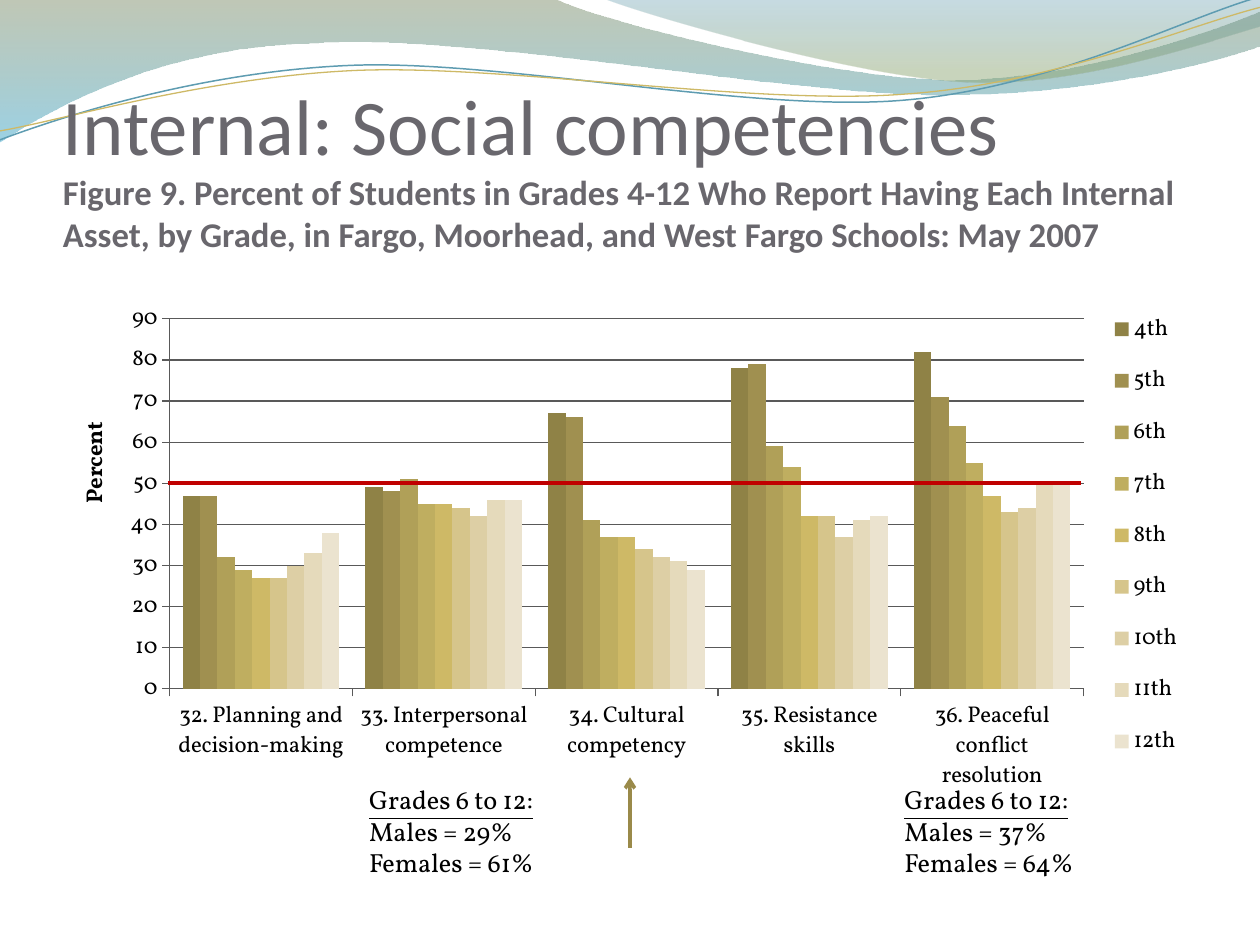
from dataclasses import dataclass

import lxml.etree
import pptx
import pptx.chart.data
import pptx.dml.color
import pptx.enum.chart
import pptx.enum.text
import pptx.oxml.ns
import pptx.util
from pptx.util import Cm, Pt

qn = pptx.oxml.ns.qn


@dataclass(frozen=True)
class Theme:
    heading_font: str = "Calibri"
    body_font: str = "Vollkorn"
    heading: str = "69676D"
    body: str = "000000"
    grid: str = "595959"
    threshold: str = "C00000"
    arrow: str = "9A8A4A"
    grades: tuple = ("8F8246", "A09050", "B0A058", "BFAE60", "CEB966",
                     "D6C58B", "DDCFA5", "E5DABB", "EBE3CF")
    title_size: float = 45
    subtitle_size: float = 19.8
    note_size: float = 15
    chart_size: float = 13


@dataclass(frozen=True)
class Stop:
    position: float
    color: str
    alpha: int


@dataclass(frozen=True)
class Wave:
    """Centimetre outline: a pair is a straight step, six numbers a Bezier curve."""
    start: tuple
    steps: tuple
    stops: tuple = ()
    line: str = ""
    width: float = 0


@dataclass(frozen=True)
class GenderNote:
    left: float
    males: int
    females: int


THEME = Theme()
WAVES = (
    Wave((0, 0), ((11.18, -0.03), (12.09, 0.43, 16.87, 1.6, 19.25, 1.6),
                  (21.67, 1.6, 24.33, 0.66, 25.4, 0.23), (25.43, 0.91),
                  (24.97, 1.12, 22.1, 1.93, 18.95, 1.91),
                  (15.8, 1.91, 9.7, 0.71, 6.53, 0.86),
                  (3.28, 0.91, 1.17, 2.11, -0.03, 2.87)),
         stops=(Stop(0, "74855E", 45), Stop(1, "4AACCE", 55))),
    Wave((12.17, -0.03), ((12.93, 0.28, 17.32, 1.57, 19.53, 1.65),
                          (21.74, 1.75, 24.41, 0.81, 25.4, 0.53), (25.4, 0)),
         stops=(Stop(0, "45889F", 30), Stop(0.8, "8AA36D", 45))),
    Wave((0, 2.82), ((1.22, 2.36, 4.01, 1.45, 7.04, 1.32),
                     (10.03, 1.19, 15.06, 2.26, 18.11, 2.03),
                     (21.16, 1.8, 23.83, 0.38, 25.35, -0.05)),
         line="5E9CB1", width=0.85),
    Wave((0, 2.64), ((1.19, 2.44, 4.17, 1.55, 7.19, 1.42),
                     (10.24, 1.3, 15.16, 2.13, 18.21, 1.9),
                     (21.23, 1.7, 23.9, 0.53, 25.4, 0.15)),
         line="CEB966", width=0.75),
)
ASSETS = ("32.\u00a0Planning and decision-making", "33.\u00a0Interpersonal competence",
          "34.\u00a0Cultural competency", "35.\u00a0Resistance skills",
          "36.\u00a0Peaceful conflict resolution")
PERCENTS = {
    "4th": (47, 49, 67, 78, 82), "5th": (47, 48, 66, 79, 71), "6th": (32, 51, 41, 59, 64),
    "7th": (29, 45, 37, 54, 55), "8th": (27, 45, 37, 42, 47), "9th": (27, 44, 34, 42, 43),
    "10th": (30, 42, 32, 37, 44), "11th": (33, 46, 31, 41, 50), "12th": (38, 46, 29, 42, 50),
}
GENDER_NOTES = (GenderNote(7.19, 29, 61), GenderNote(17.98, 37, 64))


def rgb(color: str):
    return pptx.dml.color.RGBColor.from_string(color)


def set_font(font, *, name=THEME.body_font, size=THEME.note_size, color=THEME.body,
             bold=False, underline=False):
    font.name, font.size, font.bold = name, Pt(size), bold
    font.color.rgb = rgb(color)
    if underline:
        font.underline = True


def write(paragraph, text: str, **style):
    """Add text to a paragraph, with a line break at each newline."""
    for i, line in enumerate(text.split("\n")):
        if i:
            paragraph.add_line_break()
        if line:
            run = paragraph.add_run()
            run.text = line
            set_font(run.font, **style)


def draw_outline(slide, wave: Wave):
    """Lay the points as straight steps, then join each curve's three into a Bezier."""
    builder = slide.shapes.build_freeform(Cm(wave.start[0]), Cm(wave.start[1]))
    points = [(Cm(x), Cm(y)) for step in wave.steps for x, y in zip(step[::2], step[1::2])]
    builder.add_line_segments(points, close=bool(wave.stops))
    ribbon = builder.convert_to_shape()
    straight = iter(list(ribbon._element.spPr.iter(qn("a:lnTo"))))
    for step in wave.steps:
        legs = [next(straight) for _ in step[::2]]
        if len(legs) == 3:
            curve = lxml.etree.Element(qn("a:cubicBezTo"))
            legs[0].addprevious(curve)
            for leg in legs:
                curve.append(leg[0])
                leg.getparent().remove(leg)
    return ribbon


def draw_wave(slide, wave: Wave):
    ribbon = draw_outline(slide, wave)
    ribbon.shadow.inherit = False
    if not wave.stops:
        ribbon.fill.background()
        ribbon.line.color.rgb = rgb(wave.line)
        ribbon.line.width = Pt(wave.width)
        return
    ribbon.line.fill.background()
    ribbon.fill.gradient()
    ribbon.fill.gradient_angle = 270
    for target, stop in zip(ribbon.fill.gradient_stops, wave.stops):
        target.position = stop.position
        target.color.rgb = rgb(stop.color)
    for color, stop in zip(ribbon._element.spPr.iter(qn("a:srgbClr")), wave.stops):
        lxml.etree.SubElement(color, qn("a:alpha"), val=str(stop.alpha * 1000))


def draw_line(slide, start: tuple, end: tuple, color: str, arrow: bool = False):
    line = slide.shapes.add_connector(1, *map(Cm, start + end))
    line.line.color.rgb = rgb(color)
    line.line.width = Pt(2)
    if arrow:
        lxml.etree.SubElement(line.line._get_or_add_ln(), qn("a:tailEnd"), type="arrow")
    lxml.etree.SubElement(line._element.spPr, qn("a:effectLst"))


def place(element, index: int, **fractions):
    """Fix a chart part at fractions of the chart area."""
    for old in element.findall(qn("c:layout")):
        element.remove(old)
    layout = lxml.etree.Element(qn("c:layout"))
    manual = lxml.etree.SubElement(layout, qn("c:manualLayout"))
    if index == 0:
        lxml.etree.SubElement(manual, qn("c:layoutTarget"), val="inner")
    for mode in ("xMode", "yMode"):
        lxml.etree.SubElement(manual, qn("c:" + mode), val="edge")
    for key, value in fractions.items():
        lxml.etree.SubElement(manual, qn("c:" + key), val=str(value))
    element.insert(index, layout)


def draw_chart(slide):
    data = pptx.chart.data.CategoryChartData()
    data.categories = ASSETS
    for grade, values in PERCENTS.items():
        data.add_series(grade, values)
    chart = slide.shapes.add_chart(pptx.enum.chart.XL_CHART_TYPE.COLUMN_CLUSTERED,
                                   Cm(1.27), Cm(5.38), Cm(22.86), Cm(12.19), data).chart
    set_font(chart.font, size=THEME.chart_size)
    chart.has_title = False
    plot = chart.plots[0]
    plot.gap_width, plot.overlap, plot.vary_by_categories = 150, 0, False
    for series, color in zip(plot.series, THEME.grades):
        series.format.fill.solid()
        series.format.fill.fore_color.rgb = rgb(color)

    # Axes
    percent = chart.value_axis
    percent.minimum_scale, percent.maximum_scale, percent.major_unit = 0, 90, 10
    for part in (percent, percent.major_gridlines, chart.category_axis):
        part.format.line.color.rgb = rgb(THEME.grid)
        part.format.line.width = Pt(0.7)
    axis_title = percent.axis_title
    write(axis_title.text_frame.paragraphs[0], "Percent", size=THEME.chart_size, bold=True)
    axis_title.text_frame._txBody.find(qn("a:bodyPr")).set("rot", "-5400000")
    place(axis_title._element, 1, x=0.01, y=0.25)

    # Legend and plot area
    chart.has_legend = True
    chart.legend.position = pptx.enum.chart.XL_LEGEND_POSITION.RIGHT
    chart.legend.include_in_layout = False
    set_font(chart.legend.font, size=THEME.chart_size)
    place(chart.legend._element, 1, x=0.915, y=0.043, w=0.08, h=0.803)
    place(chart._chartSpace.chart.plotArea, 0, x=0.094, y=0.086, w=0.806, h=0.612)


def draw_heading(slide):
    frame = slide.shapes.add_textbox(Cm(1.27), Cm(1.96), Cm(22.86), Cm(3.17)).text_frame
    frame.word_wrap = True
    frame.vertical_anchor = pptx.enum.text.MSO_ANCHOR.BOTTOM
    frame.margin_left = frame.margin_right = frame.margin_bottom = 0
    style = {"name": THEME.heading_font, "color": THEME.heading}
    heading = frame.paragraphs[0]
    write(heading, "Internal: Social competencies\n", size=THEME.title_size, **style)
    write(heading, "Figure 9. Percent of Students in Grades 4-12 Who Report Having Each "
          "Internal Asset, by Grade, in Fargo, Moorhead, and West Fargo Schools: May 2007",
          size=THEME.subtitle_size, bold=True, **style)


def draw_gender_note(slide, note: GenderNote):
    frame = slide.shapes.add_textbox(Cm(note.left), Cm(15.67), Cm(3.94), Cm(2.18)).text_frame
    frame.word_wrap = False
    frame.auto_size = pptx.enum.text.MSO_AUTO_SIZE.SHAPE_TO_FIT_TEXT
    write(frame.paragraphs[0], "Grades 6 to 12:", underline=True)
    write(frame.add_paragraph(), f"Males = {note.males}%\nFemales = {note.females}%")


def main():
    deck = pptx.Presentation()
    deck.slide_width, deck.slide_height = Cm(25.4), Cm(19.05)
    slide = deck.slides.add_slide(deck.slide_layouts[6])
    # Ribbons behind the heading
    for wave in WAVES:
        draw_wave(slide, wave)
    # Chart and heading
    draw_chart(slide)
    draw_heading(slide)
    # Half-way mark and pointer to cultural competency
    draw_line(slide, (3.38, 9.74), (21.79, 9.74), THEME.threshold)
    draw_line(slide, (12.7, 17.09), (12.7, 15.67), THEME.arrow, arrow=True)
    # Shares by gender
    for note in GENDER_NOTES:
        draw_gender_note(slide, note)
    deck.save("out.pptx")


if __name__ == "__main__":
    main()
